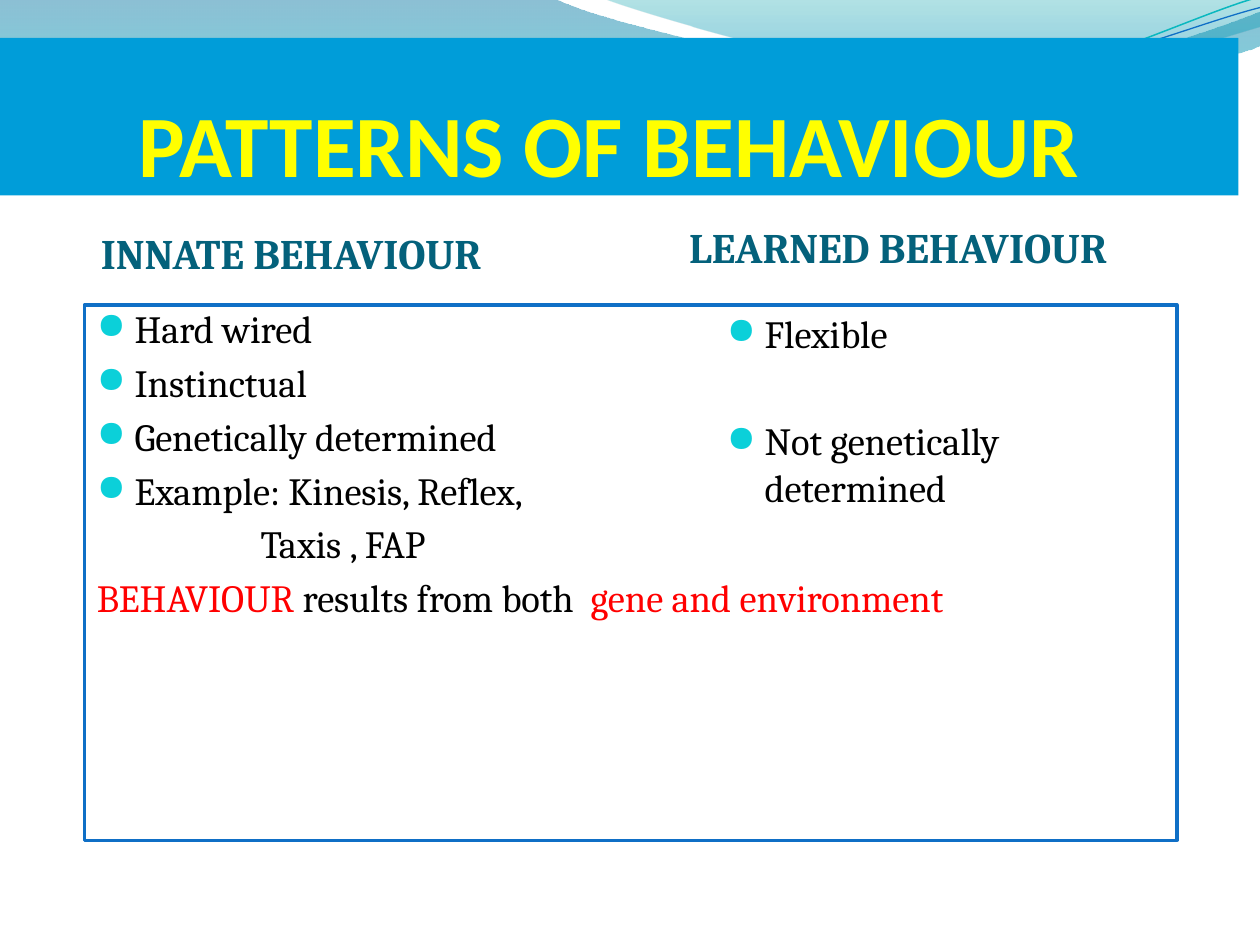
from lxml.etree import SubElement
from pptx import Presentation
from pptx.dml.color import RGBColor
from pptx.enum.shapes import MSO_SHAPE
from pptx.enum.text import MSO_ANCHOR, PP_ALIGN
from pptx.oxml.ns import qn
from pptx.util import Inches, Pt

THEME = {
    "title": {"size": Pt(50), "name": "Calibri", "bold": True, "color": "FFFF00"},
    "heading": {"size": Pt(24), "name": "Cambria", "bold": True, "color": "04617B"},
    "body": {"size": Pt(22), "name": "Cambria", "bold": False, "color": "000000"},
    "accent": {"size": Pt(22), "name": "Cambria", "bold": False, "color": "FF0000"},
    "banner": "009DD9",
    "panel": "FFFFFF",
    "border": "0F6FC6",
    "bullet": "0BD0D9",
    "bullet font": "OpenSymbol",
    "teal line": "0AB8BF",
}

WAVES = [
    {"start": (0, 0),
     "steps": [[(4.4, -0.01)], [(4.76, 0.17), (6.64, 0.63), (7.58, 0.63)],
               [(8.53, 0.63), (9.58, 0.26), (10, 0.09)], [(10.01, 0.36)],
               [(9.83, 0.44), (8.7, 0.76), (7.46, 0.75)],
               [(6.22, 0.75), (3.82, 0.28), (2.57, 0.34)],
               [(1.29, 0.36), (0.46, 0.83), (-0.01, 1.13)]],
     "gradient": [(0, "0074A1", 45), (1, "00C6CF", 55)]},
    {"start": (4.79, -0.01),
     "steps": [[(5.09, 0.11), (6.82, 0.62), (7.69, 0.65)],
               [(8.56, 0.69), (9.61, 0.32), (10, 0.21)], [(10, 0)]],
     "gradient": [(0, "00A1A9", 30), (0.8, "008BBF", 45)]},
    {"start": (0, 1.11),
     "steps": [[(0.48, 0.93), (1.58, 0.57), (2.77, 0.52)],
               [(3.95, 0.47), (5.93, 0.89), (7.13, 0.8)],
               [(8.33, 0.71), (9.38, 0.15), (9.98, -0.02)]],
     "line": (THEME["teal line"], 0.85)},
    {"start": (0, 1.04),
     "steps": [[(0.47, 0.96), (1.64, 0.61), (2.83, 0.56)],
               [(4.03, 0.51), (5.97, 0.84), (7.17, 0.75)],
               [(8.36, 0.67), (9.41, 0.21), (10, 0.06)]],
     "line": (THEME["border"], 0.75)},
]

TITLE = [{"runs": [("PATTERNS OF BEHAVIOUR ", "title")], "align": PP_ALIGN.CENTER}]
INNATE_HEADING = [{"runs": [("INNATE BEHAVIOUR", "heading")], "before": 4.8}]
LEARNED_HEADING = [{"runs": [("LEARNED BEHAVIOUR", "heading")], "before": 4.8}]


def bullet_item(text, before=4.4):
    return {"runs": [(text, "body")], "bullet": True, "before": before}


INNATE = [bullet_item(text) for text in (
    "Hard wired", "Instinctual", "Genetically determined", "Example: Kinesis, Reflex,")]
INNATE += [
    {"runs": [("Taxis , FAP", "body")], "left": 1.3, "before": 4.4},
    {"runs": [("BEHAVIOUR", "accent"), (" results from both ", "body"),
              (" gene and environment", "accent")], "before": 4.4},
]
LEARNED = [bullet_item("Flexible"), bullet_item("Not genetically determined", 35)]

BOXES = [
    {"at": (0, 0.3, 9.83, 1.25), "text": TITLE, "fill": THEME["banner"],
     "anchor": MSO_ANCHOR.BOTTOM, "insets": (0, 0.05, 0, 0)},
    {"at": (0.75, 1.67, 4.25, 0.67), "text": INNATE_HEADING,
     "anchor": MSO_ANCHOR.MIDDLE, "insets": (0.05, 0, 0.05, 0)},
    {"at": (5.42, 1.58, 4.08, 0.75), "text": LEARNED_HEADING,
     "anchor": MSO_ANCHOR.MIDDLE, "insets": (0.05, 0, 0.05, 0)},
    {"at": (0.67, 2.42, 8.67, 4.25), "text": INNATE, "fill": THEME["panel"],
     "line": (THEME["border"], 2), "anchor": MSO_ANCHOR.TOP, "insets": (0.1, 0, 0.1, 0.05)},
    {"at": (5.67, 2.46, 3.83, 5.04), "text": LEARNED,
     "anchor": MSO_ANCHOR.TOP, "insets": (0.1, 0, 0.1, 0.05)},
]


def set_line(shape, line):
    if line:
        color, width = line
        shape.line.color.rgb = RGBColor.from_string(color)
        shape.line.width = Pt(width)
    else:
        shape.line.fill.background()


def set_gradient(shape, stops):
    shape.fill.gradient()
    shape.fill.gradient_angle = 270
    for stop, (position, color, opacity) in zip(shape.fill.gradient_stops, stops):
        stop.position = position
        stop.color.rgb = RGBColor.from_string(color)
    colors = shape._element.spPr.iter(qn("a:srgbClr"))
    for element, (position, color, opacity) in zip(list(colors), stops):
        SubElement(element, qn("a:alpha"), val=str(opacity * 1000))


def bend_segments(shape, steps):
    outline = next(shape._element.spPr.iter(qn("a:path")))
    segments = iter(outline.findall(qn("a:lnTo")))
    for step in steps:
        group = [next(segments) for _ in step]
        if len(step) == 3:
            curve = outline.makeelement(qn("a:cubicBezTo"))
            group[0].addprevious(curve)
            for segment in group:
                curve.append(segment[0])
                outline.remove(segment)


def add_wave(slide, wave):
    points = [wave["start"]] + [point for step in wave["steps"] for point in step]
    points = [(Inches(x), Inches(y)) for x, y in points]
    builder = slide.shapes.build_freeform(*points[0])
    builder.add_line_segments(points[1:], close="gradient" in wave)
    shape = builder.convert_to_shape()
    bend_segments(shape, wave["steps"])
    shape.shadow.inherit = False
    if "gradient" in wave:
        set_gradient(shape, wave["gradient"])
    else:
        shape.fill.background()
    set_line(shape, wave.get("line"))


def add_bullet(properties):
    color = SubElement(properties, qn("a:buClr"))
    SubElement(color, qn("a:srgbClr"), val=THEME["bullet"])
    SubElement(properties, qn("a:buSzPct"), val="95000")
    SubElement(properties, qn("a:buFont"), typeface=THEME["bullet font"])
    SubElement(properties, qn("a:buChar"), char="●")


def write_paragraph(paragraph, item):
    paragraph.alignment = item.get("align", PP_ALIGN.LEFT)
    paragraph.space_before = Pt(item.get("before", 0))
    properties = paragraph._p.get_or_add_pPr()
    if item.get("bullet"):
        properties.set("marL", str(Inches(0.3)))
        properties.set("indent", str(Inches(-0.3)))
        add_bullet(properties)
    elif "left" in item:
        properties.set("marL", str(Inches(item["left"])))
    for text, style in item["runs"]:
        run = paragraph.add_run()
        run.text = text
        for name, value in THEME[style].items():
            if name == "color":
                run.font.color.rgb = RGBColor.from_string(value)
            else:
                setattr(run.font, name, value)


def add_box(slide, box):
    position = [Inches(value) for value in box["at"]]
    if "fill" in box:
        shape = slide.shapes.add_shape(MSO_SHAPE.RECTANGLE, *position)
        shape.shadow.inherit = False
        shape.fill.solid()
        shape.fill.fore_color.rgb = RGBColor.from_string(box["fill"])
        set_line(shape, box.get("line"))
    else:
        shape = slide.shapes.add_textbox(*position)
    frame = shape.text_frame
    frame.word_wrap = True
    frame.vertical_anchor = box["anchor"]
    for side, inset in zip(("left", "top", "right", "bottom"), box["insets"]):
        setattr(frame, f"margin_{side}", Inches(inset))
    for index, item in enumerate(box["text"]):
        write_paragraph(frame.add_paragraph() if index else frame.paragraphs[0], item)


def main():
    presentation = Presentation()
    presentation.slide_width, presentation.slide_height = Inches(10), Inches(7.5)
    slide = presentation.slides.add_slide(presentation.slide_layouts[6])
    for wave in WAVES:
        add_wave(slide, wave)
    for box in BOXES:
        add_box(slide, box)
    presentation.save("out.pptx")


if __name__ == "__main__":
    main()
